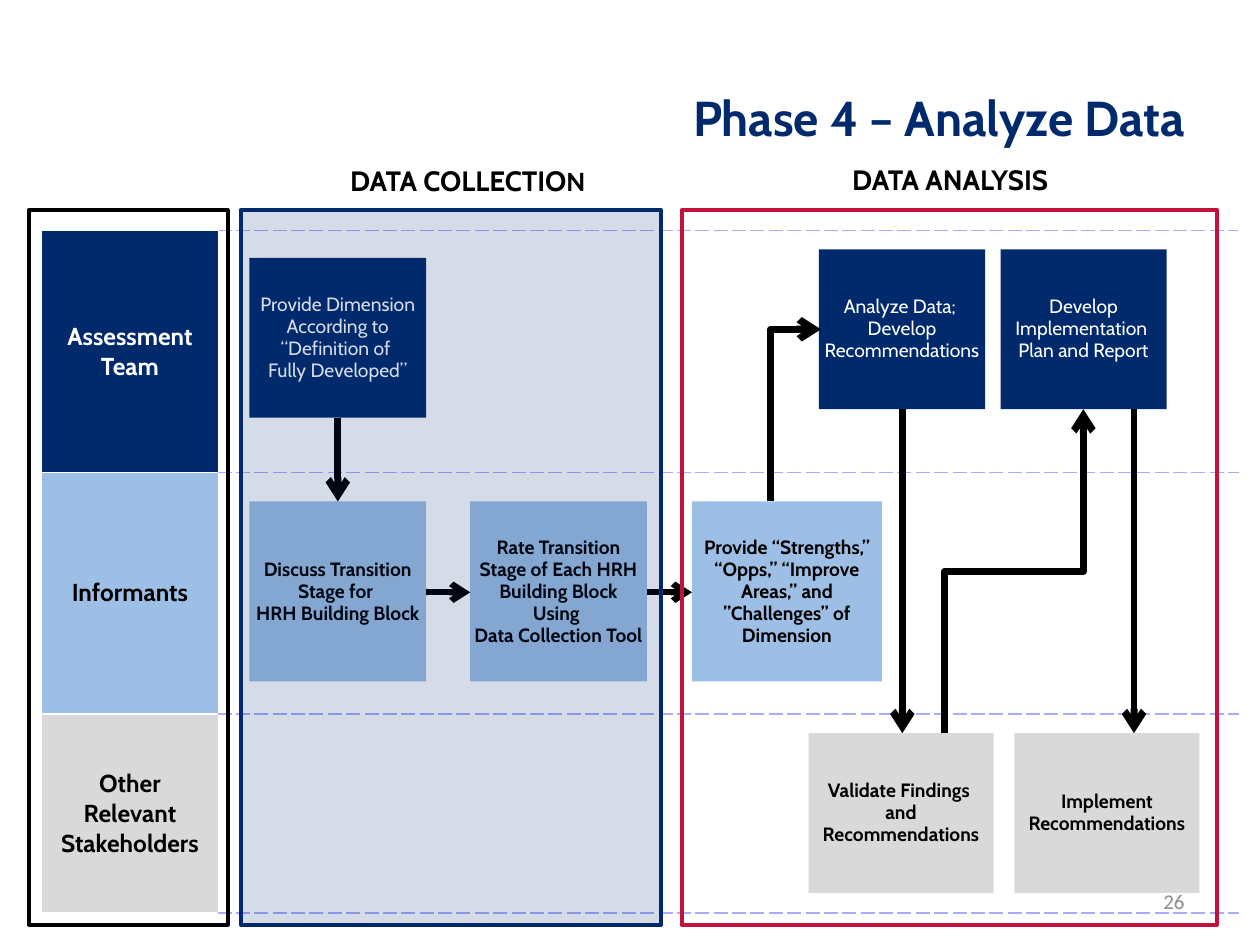
import pptx
import pptx.util
import pptx.oxml
import pptx.oxml.ns
from pptx.dml.color import RGBColor
from pptx.enum.shapes import MSO_CONNECTOR, MSO_SHAPE
from pptx.enum.text import MSO_ANCHOR, PP_ALIGN
from pptx.util import Cm

NAVY = RGBColor(0x00, 0x2A, 0x6C)
SKY = RGBColor(0x9D, 0xBF, 0xE5)
SILVER = RGBColor(0xD9, 0xD9, 0xD9)
CRIMSON = RGBColor(0xC2, 0x11, 0x3A)
LILAC = RGBColor(0xAA, 0xAA, 0xFF)
GRAY = RGBColor(0x8C, 0x8C, 0x8C)
BLACK = RGBColor(0x00, 0x00, 0x00)
WHITE = RGBColor(0xFF, 0xFF, 0xFF)


class SwimlaneSlide:
    font = "Cabin"

    def __init__(self, slide):
        self.slide = slide

    def style_run(self, run, size, color, bold=True, font=None):
        run.font.name = font or self.font
        run.font.size = pptx.util.Pt(size)
        run.font.bold = bold
        run.font.color.rgb = color

    def put_text(self, text_frame, text, size, color, bold=True,
                 align=PP_ALIGN.CENTER, spacing=None, font=None):
        paragraph = text_frame.paragraphs[0]
        paragraph.text = text
        paragraph.alignment = align
        if spacing:
            paragraph.line_spacing = spacing
        for run in paragraph.runs:
            self.style_run(run, size, color, bold, font)
        return paragraph

    def label(self, left, top, width, height, text, size, color,
              anchor=MSO_ANCHOR.TOP, **style):
        box = self.slide.shapes.add_textbox(Cm(left), Cm(top), Cm(width), Cm(height))
        box.text_frame.word_wrap = True
        box.text_frame.vertical_anchor = anchor
        return self.put_text(box.text_frame, text, size, color, **style)

    def rectangle(self, left, top, width, height):
        shape = self.slide.shapes.add_shape(
            MSO_SHAPE.RECTANGLE, Cm(left), Cm(top), Cm(width), Cm(height))
        shape.shadow.inherit = False
        return shape

    def step(self, left, top, width, height, text, fill):
        shape = self.rectangle(left, top, width, height)
        shape.fill.solid()
        shape.fill.fore_color.rgb = fill
        shape.line.fill.background()
        frame = shape.text_frame
        frame.word_wrap = True
        frame.vertical_anchor = MSO_ANCHOR.MIDDLE
        frame.margin_left = frame.margin_right = Cm(0.08)
        frame.margin_top = frame.margin_bottom = Cm(0.08)
        dark = fill == NAVY
        self.put_text(frame, text, 11, WHITE if dark else BLACK,
                      bold=not dark, spacing=0.95)

    def frame(self, left, width, color, opacity=0):
        shape = self.rectangle(left, 4.24, width, 14.4)
        shape.line.color.rgb = color
        shape.line.width = pptx.util.Pt(2.25)
        if not opacity:
            shape.fill.background()
            return
        shape.fill.solid()
        shape.fill.fore_color.rgb = color
        tint = shape._element.spPr.find(
            pptx.oxml.ns.qn("a:solidFill") + "/" + pptx.oxml.ns.qn("a:srgbClr"))
        tint.append(tint.makeelement(pptx.oxml.ns.qn("a:alpha"), {"val": str(opacity * 1000)}))

    def arrow(self, x1, y1, x2, y2, width=4, kind=MSO_CONNECTOR.STRAIGHT):
        connector = self.slide.shapes.add_connector(kind, Cm(x1), Cm(y1), Cm(x2), Cm(y2))
        connector.line.color.rgb = BLACK
        connector.line.width = pptx.util.Pt(width)
        properties = connector._element.spPr
        line = properties.find(pptx.oxml.ns.qn("a:ln"))
        line.append(line.makeelement(pptx.oxml.ns.qn("a:tailEnd"), {"type": "arrow"}))
        properties.append(properties.makeelement(pptx.oxml.ns.qn("a:effectLst"), {}))
        return connector

    def elbow(self, x1, y1, x2, y2, bend=0.5):
        """Arrow that leaves vertically: a horizontal elbow turned by 90 degrees."""
        middle_x, middle_y = (x1 + x2) / 2, (y1 + y2) / 2
        half_x, half_y = (x2 - x1) / 2, (y2 - y1) / 2
        connector = self.arrow(middle_x - half_y, middle_y + half_x,
                               middle_x + half_y, middle_y - half_x,
                               kind=MSO_CONNECTOR.ELBOW)
        properties = connector._element.spPr
        properties.find(pptx.oxml.ns.qn("a:xfrm")).set("rot", "5400000")
        guides = properties.find(".//" + pptx.oxml.ns.qn("a:avLst"))
        guides.append(guides.makeelement(
            pptx.oxml.ns.qn("a:gd"),
            {"name": "adj1", "fmla": f"val {round(bend * 100000)}"}))

    def border(self, cell, side, color, dash="solid"):
        cell._tc.get_or_add_tcPr().append(pptx.oxml.parse_xml(
            f'<a:ln{side} {pptx.oxml.ns.nsdecls("a")} w="12700"><a:solidFill>'
            f'<a:srgbClr val="{color}"/></a:solidFill><a:prstDash val="{dash}"/></a:ln{side}>'))

    def lanes(self, left, top, widths, rows):
        table = self.slide.shapes.add_table(
            len(rows), len(widths), Cm(left), Cm(top), Cm(sum(widths)),
            Cm(sum(row[0] for row in rows))).table
        table.first_row = table.horz_banding = False
        for column, width in zip(table.columns, widths):
            column.width = Cm(width)
        last = len(rows) - 1
        for index, (height, text, fill, color) in enumerate(rows):
            table.rows[index].height = Cm(height)
            name, lane = table.cell(index, 0), table.cell(index, 1)
            if index > 0:
                self.border(name, "T", WHITE)
            self.border(name, "B", WHITE)
            self.border(lane, "T", LILAC, "sysDash")
            self.border(lane, "B", LILAC, "dash" if index == last else "sysDash")
            name.fill.solid()
            name.fill.fore_color.rgb = fill
            lane.fill.background()
            name.margin_left = name.margin_right = Cm(0.2)
            name.margin_top = name.margin_bottom = Cm(0.2)
            name.vertical_anchor = MSO_ANCHOR.MIDDLE
            self.put_text(name.text_frame, text, 14, color)


def main():
    presentation = pptx.Presentation()
    presentation.slide_width, presentation.slide_height = Cm(25.4), Cm(19.05)
    page = SwimlaneSlide(presentation.slides.add_slide(presentation.slide_layouts[6]))

    # Title and phase headings
    page.label(1.27, 0.76, 22.86, 3.18, "Phase 4 – Analyze Data", 28, NAVY,
               anchor=MSO_ANCHOR.MIDDLE, align=PP_ALIGN.RIGHT)
    heading = page.label(6.15, 3.18, 6.55, 0.94, "DATA COLLECTIO", 16, BLACK)
    letter = heading.add_run()
    letter.text = "N"
    page.style_run(letter, 16, BLACK, font="Calibri")
    page.label(15.88, 3.15, 6.55, 0.94, "DATA ANALYSIS", 16, BLACK)

    # Lanes
    page.lanes(0.84, 4.65, (3.56, 20.57), (
        (4.87, "Assessment Team", NAVY, WHITE),
        (4.87, "Informants", SKY, BLACK),
        (4.02, "Other Relevant Stakeholders", SILVER, BLACK)))

    # Steps, lane by lane
    analysis, informants, others = 5.03, 10.11, 14.78
    for left, top, width, height, text, fill in (
            (5.03, 5.2, 3.56, 3.22,
             "Provide Dimension According to “Definition of \nFully Developed”", NAVY),
            (16.51, analysis, 3.35, 3.22, "Analyze Data; \nDevelop Recommendations", NAVY),
            (20.17, analysis, 3.35, 3.22, "Develop Implementation \nPlan and Report", NAVY),
            (5.03, informants, 3.56, 3.63,
             "Discuss Transition Stage for \nHRH Building Block", SKY),
            (9.48, informants, 3.56, 3.63,
             "Rate Transition Stage of Each HRH Building Block Using \nData Collection Tool", SKY),
            (13.95, informants, 3.83, 3.63,
             "Provide “Strengths,” “Opps,” “Improve Areas,” and ”Challenges” of Dimension", SKY),
            (16.3, others, 3.73, 3.22, "Validate Findings \nand Recommendations", SILVER),
            (20.45, others, 3.73, 3.22, "Implement Recommendations", SILVER)):
        page.step(left, top, width, height, text, fill)

    # Arrows between steps
    page.arrow(6.81, 8.42, 6.81, informants)
    page.arrow(8.59, 11.94, 9.48, 11.94, 3.5)
    page.arrow(13.04, 11.94, 13.95, 11.94, 3.5)
    page.arrow(18.19, 8.25, 18.19, others)
    page.elbow(15.53, informants, 16.55, 6.64, bend=1)
    page.elbow(19.05, others, 21.84, 8.25)
    page.elbow(22.86, 8.25, 22.86, others)

    # Phase frames
    page.frame(4.85, 8.48, NAVY, opacity=16)
    page.frame(0.58, 4.01, BLACK)
    page.frame(13.74, 10.8, CRIMSON)

    # Page number
    page.label(18.21, 17.65, 5.92, 1.02, "26", 12, GRAY, bold=False, font="Calibri",
               anchor=MSO_ANCHOR.MIDDLE, align=PP_ALIGN.RIGHT)

    presentation.save("out.pptx")


if __name__ == "__main__":
    main()
